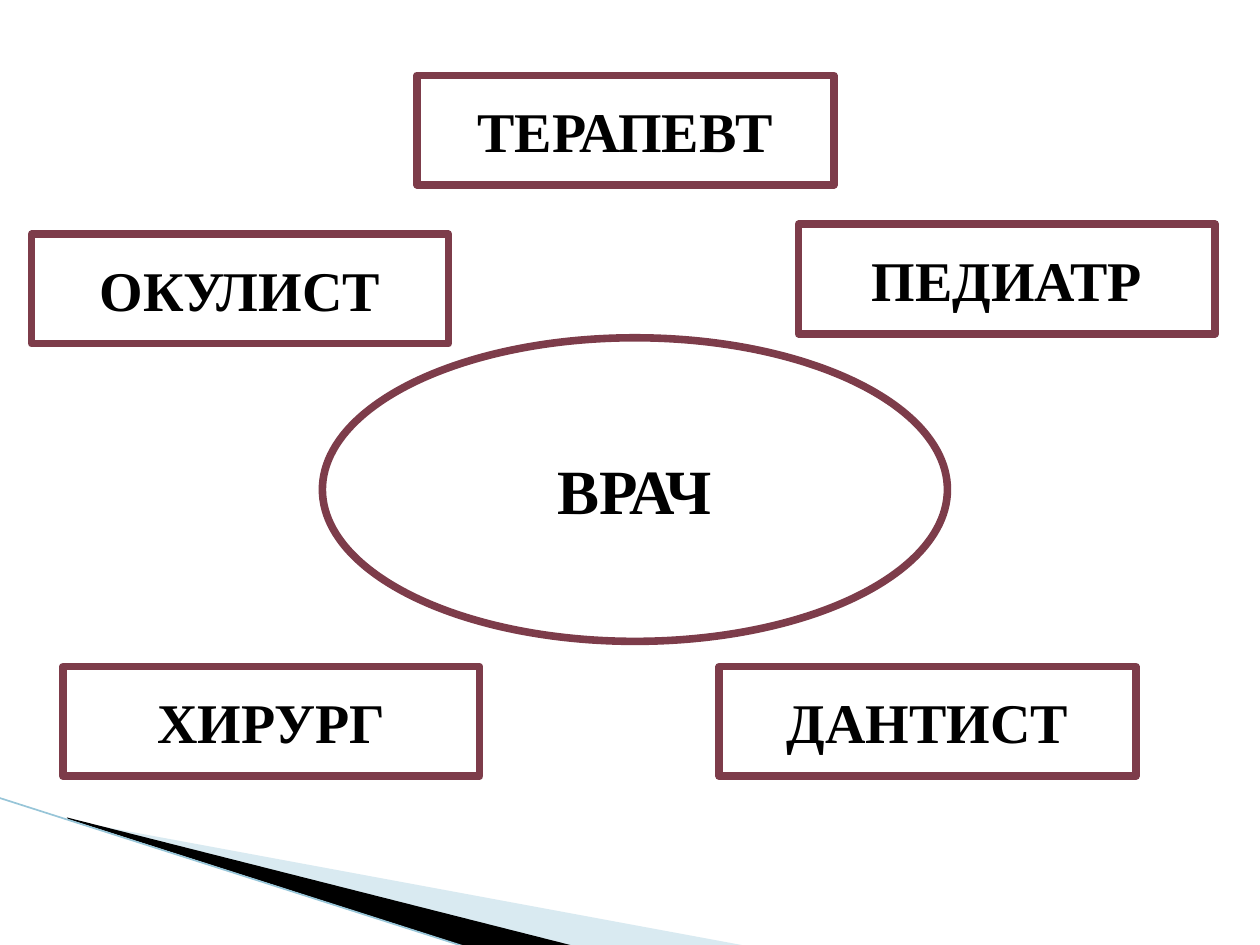
"""Build a slide with five medical specialists placed around the word for doctor."""
import lxml.etree
import pptx
import pptx.dml.color
import pptx.enum.shapes
import pptx.enum.text
import pptx.oxml
import pptx.oxml.ns
import pptx.util

Cm = pptx.util.Cm
Pt = pptx.util.Pt
RGB = pptx.dml.color.RGBColor.from_string
SHAPE = pptx.enum.shapes.MSO_SHAPE
qn = pptx.oxml.ns.qn
COLORS = {"paper": "FFFFFF", "ink": "000000", "frame": "7D3C4A", "pale": "A0CBDC", "edge": "97C5D8"}

prs = pptx.Presentation()
prs.slide_width, prs.slide_height = Cm(25.4), Cm(19.05)
s = prs.slides.add_slide(prs.slide_layouts[6])


def add_label(text, kind=SHAPE.RECTANGLE, left=0, top=0, width=8.4, height=2.21, size=32):
    sp = s.shapes.add_shape(kind, Cm(left), Cm(top), Cm(width), Cm(height))
    sp.shadow.inherit = False
    sp.fill.solid()
    sp.fill.fore_color.rgb = RGB(COLORS["paper"])
    sp.line.color.rgb = RGB(COLORS["frame"])
    sp.line.width = Pt(4.33)
    lxml.etree.SubElement(sp.line._ln, qn("a:round"))
    tf = sp.text_frame
    tf.word_wrap = True
    tf.vertical_anchor = pptx.enum.text.MSO_ANCHOR.MIDDLE
    p = tf.paragraphs[0]
    p.alignment = pptx.enum.text.PP_ALIGN.CENTER
    r = p.add_run()
    r.text = text
    r.font.name = "Times New Roman"
    r.font.size = Pt(size)
    r.font.bold = True
    r.font.color.rgb = RGB(COLORS["ink"])


wedges = [
    ("pale", 40, [(1.4, 16.54), (15.11, 19.08), (11.58, 19.08), (1.4, 16.51)]),
    ("ink", 100, [(1.35, 16.48), (11.61, 19.08), (9.45, 19.1), (1.37, 16.51)]),
]
for color, opacity, points in wedges:
    corners = [(Cm(x), Cm(y)) for x, y in points]
    fb = s.shapes.build_freeform(*corners[0])
    fb.add_line_segments(corners[1:], close=True)
    sp = fb.convert_to_shape()
    sp.shadow.inherit = False
    sp.line.fill.background()
    sp.fill.solid()
    sp.fill.fore_color.rgb = RGB(COLORS[color])
    if opacity < 100:
        clr = sp._element.spPr.find(qn("a:solidFill"))[0]
        lxml.etree.SubElement(clr, qn("a:alpha"), val=str(opacity * 1000))

cx = s.shapes.add_connector(
    pptx.enum.shapes.MSO_CONNECTOR.STRAIGHT, Cm(-0.03), Cm(16.08), Cm(9.42), Cm(19.1))
cx.line.color.rgb = RGB(COLORS["edge"])
cx.line.width = Pt(0.95)
lxml.etree.SubElement(cx._element.spPr, qn("a:effectLst"))

add_label("ВРАЧ", kind=SHAPE.OVAL, left=6.5, top=6.81, width=12.6, height=6.12, size=36)
specialists = [
    ("ТЕРАПЕВТ", 8.41, 1.52),
    ("ОКУЛИСТ", 0.64, 4.72),
    ("ХИРУРГ", 1.27, 13.44),
    ("ДАНТИСТ", 14.5, 13.44),
    ("ПЕДИАТР", 16.1, 4.52),
]
for text, left, top in specialists:
    add_label(text, left=left, top=top)

prs.save("out.pptx")
